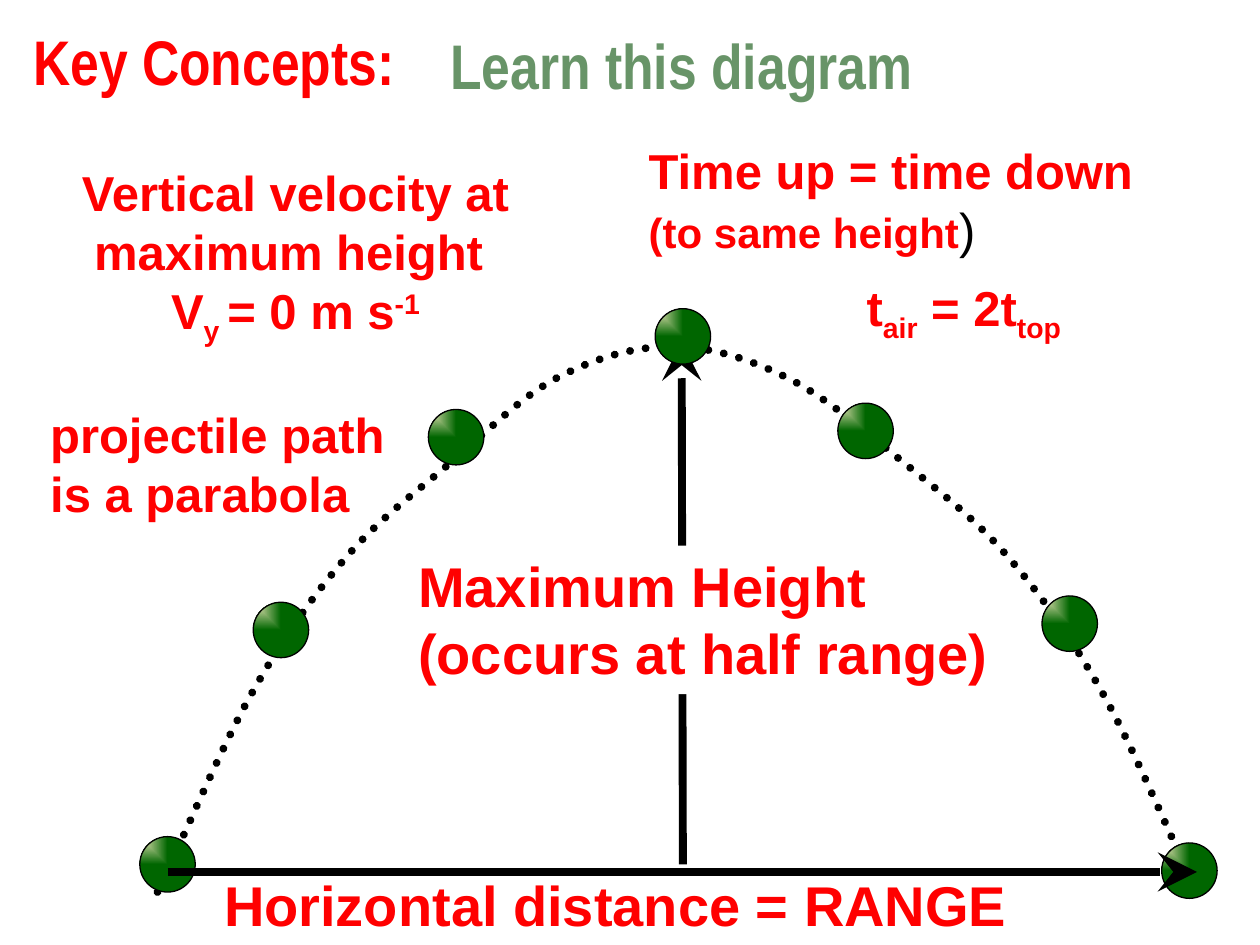
from itertools import pairwise

from lxml.etree import SubElement
from pptx import Presentation
from pptx.dml.color import RGBColor
from pptx.enum.dml import MSO_LINE
from pptx.enum.shapes import MSO_CONNECTOR, MSO_SHAPE
from pptx.enum.text import MSO_ANCHOR, PP_ALIGN
from pptx.oxml.ns import qn
from pptx.util import Inches, Pt

COLUMNS, ROWS = 100, 75
WIDTH, HEIGHT = Inches(10), Inches(7.5)
RED, GREEN, BLACK, WHITE = "FF0000", "689468", "000000", "FFFFFF"
BALL_LIGHT, BALL_DARK = "F5EBC1", "006600"
BALL_SIZE = 4.4
STROKE = 4.5
SUBSCRIPT, SUPERSCRIPT = -25000, 30000

LABEL = {"name": "Arial", "size": Pt(28), "bold": True}
LARGE = LABEL | {"size": Pt(32)}
HEADING = LABEL | {"name": "Arial Narrow", "size": Pt(36)}

PATH_KNOTS = [(12.5, 70.8), (20, 55), (27.5, 44.2), (35.8, 36.7), (44.2, 30),
              (53.3, 27.5), (62.5, 30), (71.7, 36.7), (80, 44.2), (87.5, 55),
              (95, 70.8)]
BALLS = [(82.7, 47.3), (52, 24.5), (34, 32.5), (20.1, 47.8), (11.1, 66.4),
         (66.5, 32), (92.2, 66.9)]


def grid(*values):
    """Turn alternating column and row counts into slide lengths."""
    units = (WIDTH / COLUMNS, HEIGHT / ROWS)
    return [round(value * units[i % 2]) for i, value in enumerate(values)]


def paint(target, color):
    """Give a fill or line format a solid colour."""
    getattr(target, "fill", target).solid()
    getattr(target, "fill", target).fore_color.rgb = RGBColor.from_string(color)


def write(frame, paragraphs, style, color=RED, align=PP_ALIGN.LEFT, wrap=True):
    """Write paragraphs of (text, baseline, style changes, colour) runs."""
    frame.word_wrap = wrap
    frame.vertical_anchor = MSO_ANCHOR.TOP
    for i, runs in enumerate(paragraphs):
        paragraph = frame.paragraphs[0] if i == 0 else frame.add_paragraph()
        paragraph.alignment = align
        for text, baseline, changes, run_color in runs:
            run = paragraph.add_run()
            run.text = text
            for name, value in (style | changes).items():
                setattr(run.font, name, value)
            paint(run.font, run_color or color)
            if baseline:
                run.font._element.set("baseline", str(baseline))


def part(text, baseline=0, color=None, **changes):
    """Describe one run of a label."""
    return text, baseline, changes, color


def add_label(slide, box, paragraphs, style=LABEL, **options):
    """Add a text box on the grid."""
    label = slide.shapes.add_textbox(*grid(*box))
    write(label.text_frame, paragraphs, style, **options)


def add_height_panel(slide):
    """Add the white panel that interrupts the height arrow."""
    panel = slide.shapes.add_shape(MSO_SHAPE.RECTANGLE, *grid(32.2, 43.3, 51.2, 11.8))
    panel.shadow.inherit = False
    paint(panel.fill, WHITE)
    panel.line.fill.background()
    write(panel.text_frame,
          [[part("Maximum Height")], [part("(occurs at half range)")]], LARGE)


def add_arrow(slide, start, end):
    """Add a thick black line with a large stealth head at its end."""
    arrow = slide.shapes.add_connector(MSO_CONNECTOR.STRAIGHT, *grid(*start, *end))
    paint(arrow.line, BLACK)
    arrow.line.width = Pt(STROKE)
    SubElement(arrow.line._get_or_add_ln(), qn("a:tailEnd"),
               type="stealth", w="lg", len="lg")
    SubElement(arrow._element.spPr, qn("a:effectLst"))


def spline(knots, steps=12):
    """Return points on a smooth curve through the knots."""
    def reflect(end, inner):
        return tuple(2 * a - b for a, b in zip(end, inner))

    padded = [reflect(*knots[:2]), *knots, reflect(knots[-1], knots[-2])]
    points = [knots[0]]
    for i, (start, end) in enumerate(pairwise(knots)):
        before, after = padded[i], padded[i + 3]
        for t in (step / steps for step in range(1, steps + 1)):
            points.append(tuple(
                b + t / 2 * (c - a + t * (2 * a - 5 * b + 4 * c - d
                                          + t * (3 * (b - c) + d - a)))
                for a, b, c, d in zip(before, start, end, after)))
    return points


def add_trajectory(slide):
    """Draw the dotted projectile path."""
    first, *rest = [grid(*point) for point in spline(PATH_KNOTS)]
    builder = slide.shapes.build_freeform(*first)
    builder.add_line_segments(rest, close=False)
    trajectory = builder.convert_to_shape()
    trajectory.shadow.inherit = False
    trajectory.fill.background()
    paint(trajectory.line, BLACK)
    trajectory.line.width = Pt(STROKE)
    trajectory.line.dash_style = MSO_LINE.ROUND_DOT
    trajectory.line._get_or_add_ln().set("cap", "rnd")


def add_ball(slide, left, top):
    """Add a ball lit from its upper left."""
    ball = slide.shapes.add_shape(MSO_SHAPE.OVAL,
                                  *grid(left, top, BALL_SIZE, BALL_SIZE))
    ball.shadow.inherit = False
    ball.fill.gradient()
    for stop, position, color in zip(ball.fill.gradient_stops, (0, 1),
                                     (BALL_LIGHT, BALL_DARK)):
        stop.position = position
        stop.color.rgb = RGBColor.from_string(color)
    gradient = ball._element.spPr.find(qn("a:gradFill"))
    gradient.remove(gradient.find(qn("a:lin")))
    light = SubElement(gradient, qn("a:path"), path="rect")
    SubElement(light, qn("a:fillToRect"), l="0", t="0", r="100000", b="100000")
    paint(ball.line, BLACK)
    ball.line.width = Pt(0.75)


def main():
    """Build the projectile motion slide."""
    deck = Presentation()
    deck.slide_width, deck.slide_height = WIDTH, HEIGHT
    slide = deck.slides.add_slide(deck.slide_layouts[6])

    add_label(slide, (16.8, 68.6, 67.1, 6.4),
              [[part("Horizontal distance = RANGE")]], LARGE)
    add_arrow(slide, (54.2, 68.6), (54.1, 27.1))
    add_height_panel(slide)
    add_label(slide, (0.1, 12.4, 46.7, 15.1),
              [[part("Vertical velocity at maximum height ")],
               [part("V"), part("y ", SUBSCRIPT), part("= 0 m s"),
                part("-1", SUPERSCRIPT)]], align=PP_ALIGN.CENTER)
    add_label(slide, (50.5, 10.7, 50.8, 10.4),
              [[part("Time up = time down")],
               [part("(to same height", size=Pt(24)),
                part(")", color=BLACK, bold=False)]])
    add_trajectory(slide)
    add_label(slide, (3, 31.6, 29.2, 10.4), [[part("projectile path is a parabola")]])
    for left, top in BALLS:
        add_ball(slide, left, top)
    add_arrow(slide, (13.3, 69.2), (95, 69.2))
    for box, text, color in (((1.5, 1.3, 32.1, 7.1), "Key Concepts: ", RED),
                             ((34.6, 1.6, 39, 7.1), "Learn this diagram", GREEN)):
        add_label(slide, box, [[part(text)]], HEADING, color=color,
                  align=PP_ALIGN.CENTER, wrap=False)
    add_label(slide, (67.8, 21.5, 50.8, 5.7),
              [[part("t"), part("air", SUBSCRIPT), part(" = 2t"),
                part("top", SUBSCRIPT)]])
    deck.save("out.pptx")


if __name__ == "__main__":
    main()
